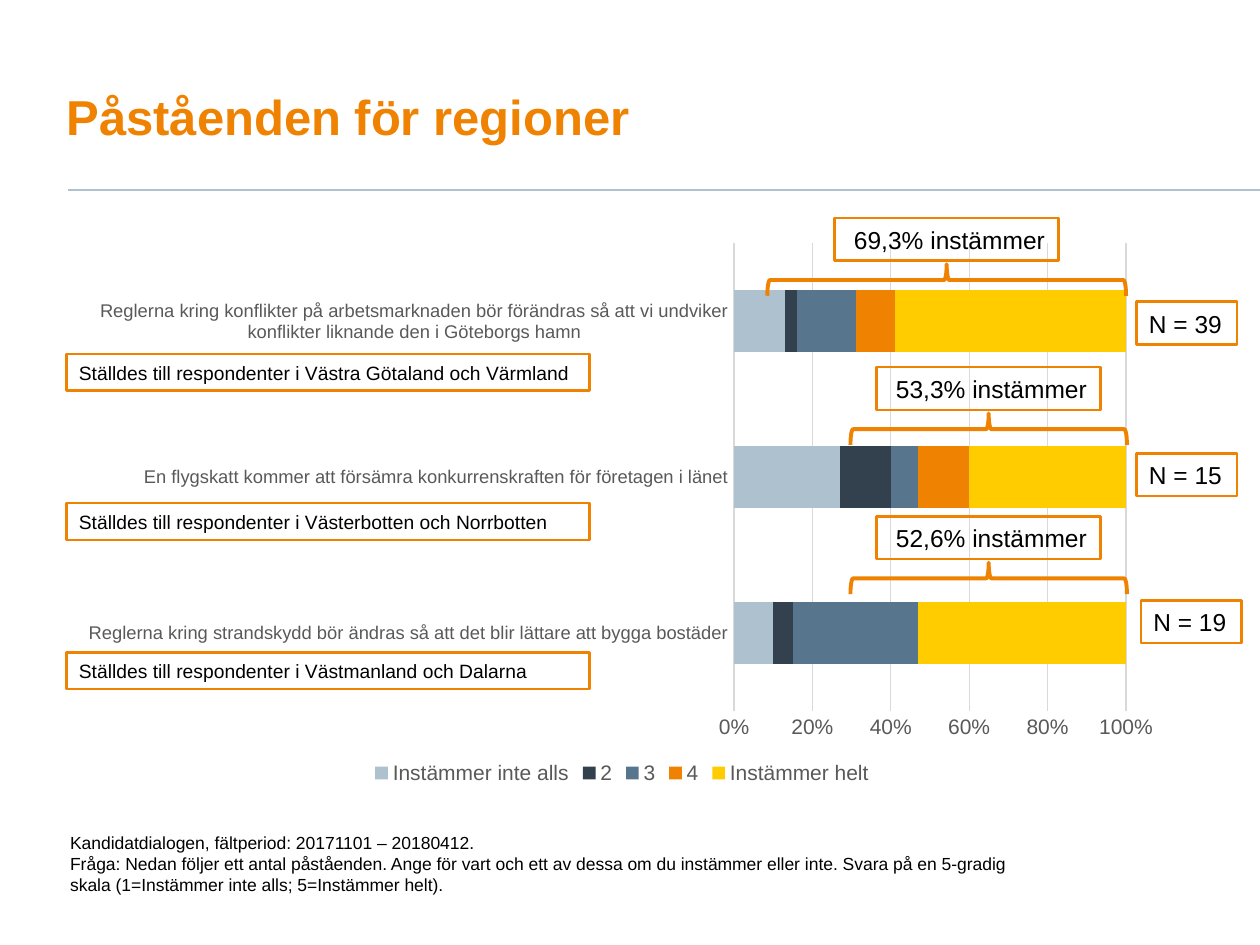
from dataclasses import dataclass
from lxml.etree import SubElement
from pptx import Presentation
from pptx.chart.data import CategoryChartData as Data
from pptx.dml.color import RGBColor
from pptx.enum.chart import XL_CHART_TYPE as Kind, XL_LEGEND_POSITION as Spot, XL_TICK_MARK as Tick
from pptx.enum.shapes import MSO_CONNECTOR as Link, MSO_SHAPE as Form
from pptx.enum.text import MSO_ANCHOR as Anchor, MSO_AUTO_SIZE as Auto, PP_ALIGN as Align
from pptx.oxml.ns import qn
from pptx.util import Pt


@dataclass(frozen=True)
class Theme:
    face: str = "Arial"
    ink: str = "000000"
    gray: str = "595959"
    grid: str = "D9D9D9"
    pale: str = "AEC1CF"
    dark: str = "33414E"
    blue: str = "57758D"
    main: str = "EF8200"
    gold: str = "FFCC00"
    head: float = 28
    tag: float = 14
    axis: float = 12
    note: float = 11
    label: float = 10.5
    foot: float = 10


def tint(hue):
    return RGBColor.from_string(hue)


def style(font, face, size, hue, bold=False):
    font.name, font.size, font.bold = face, Pt(size), bold
    font.color.rgb = tint(hue)


def write(frame, text, face, size, hue, bold=False, space=1.0,
          anchor=Anchor.TOP, inset=(7.2, 3.6, 7.2, 3.6), fit=Auto.SHAPE_TO_FIT_TEXT):
    frame.text = text
    frame.word_wrap, frame.auto_size = True, fit
    frame.vertical_anchor = anchor
    (frame.margin_left, frame.margin_top,
     frame.margin_right, frame.margin_bottom) = map(Pt, inset)
    for para in frame.paragraphs:
        para.alignment, para.line_spacing = Align.LEFT, space
        for run in para.runs:
            style(run.font, face, size, hue, bold)


class Page:
    def __init__(self, deck, theme):
        self.theme = theme
        self.slide = deck.slides.add_slide(deck.slide_layouts[5])
        self.shapes = self.slide.shapes

    def title(self, text, x, y, w, h):
        box = self.shapes.title
        box.left, box.top, box.width, box.height = map(Pt, (x, y, w, h))
        write(box.text_frame, text, self.theme.face, self.theme.head, self.theme.main,
              bold=True, space=0.9, anchor=Anchor.BOTTOM, inset=(0, 0, 7.2, 3.6),
              fit=Auto.NONE)

    def rule(self, x, y, end):
        line = self.shapes.add_connector(Link.STRAIGHT, Pt(x), Pt(y), Pt(end), Pt(y))
        line.line.color.rgb, line.line.width = tint(self.theme.pale), Pt(1)
        SubElement(line.element.spPr, qn("a:effectLst"))

    def text(self, text, x, y, w, h):
        box = self.shapes.add_textbox(*map(Pt, (x, y, w, h)))
        write(box.text_frame, text, self.theme.face, self.theme.foot, self.theme.ink)

    def form(self, kind, x, y, w, h, width, host=None):
        shape = (host or self).shapes.add_shape(kind, *map(Pt, (x, y, w, h)))
        shape.shadow.inherit = False
        shape.fill.background()
        shape.line.color.rgb, shape.line.width = tint(self.theme.main), Pt(width)
        return shape

    def box(self, text, x, y, w, h, size, host=None, **style):
        shape = self.form(Form.RECTANGLE, x, y, w, h, 1.5, host)
        write(shape.text_frame, text, self.theme.face, size, self.theme.ink,
              anchor=Anchor.MIDDLE, **style)

    def brace(self, text, mid, top, span):
        group = self.shapes.add_group_shape()
        deep, wide, high = 18, 128, 24.5
        y = top + high + 2 + (deep - span) / 2
        brace = self.form(Form.RIGHT_BRACE, mid - deep / 2, y, deep, span, 2.25, group)
        brace.rotation = 270
        self.box(text, mid - wide / 2, top, wide, high, self.theme.tag, group,
                 inset=(11, 3.6, 4, 3.6))

    def chart(self, cats, rows, x, y, w, h, plot):
        theme = self.theme
        data = Data()
        data.categories = cats
        for name, vals, _ in rows:
            data.add_series(name, vals)
        chart = self.shapes.add_chart(Kind.BAR_STACKED_100, *map(Pt, (x, y, w, h)), data).chart
        chart.has_title = False
        style(chart.font, theme.face, theme.foot, theme.ink)
        bars = chart.plots[0]
        bars.gap_width, bars.overlap, bars.vary_by_categories = 150, 100, False
        for series, (_, _, hue) in zip(bars.series, rows):
            series.format.fill.solid()
            series.format.fill.fore_color.rgb = tint(hue)
        chart.has_legend = True
        chart.legend.position, chart.legend.include_in_layout = Spot.BOTTOM, False
        style(chart.legend.font, theme.face, theme.axis, theme.gray)
        cat, val = chart.category_axis, chart.value_axis
        for axis, size in ((cat, theme.label), (val, theme.axis)):
            axis.major_tick_mark = axis.minor_tick_mark = Tick.NONE
            style(axis.tick_labels.font, theme.face, size, theme.gray)
        cat.has_major_gridlines, val.has_major_gridlines = False, True
        for line in (cat.format.line, val.major_gridlines.format.line):
            line.color.rgb, line.width = tint(theme.grid), Pt(0.75)
        val.format.line.fill.background()
        val.minimum_scale, val.maximum_scale, val.major_unit = 0, 1, 0.2
        val.tick_labels.number_format = "0%"
        val.tick_labels.number_format_is_linked = False
        area = chart.element.find(".//" + qn("c:plotArea"))
        layout = area.find(qn("c:layout"))
        if layout is None:
            layout = SubElement(area, qn("c:layout"))
            area.insert(0, layout)
        manual = SubElement(layout, qn("c:manualLayout"))
        parts = [("layoutTarget", "inner"), ("xMode", "edge"), ("yMode", "edge")]
        for name, value in parts + list(zip("xywh", plot)):
            SubElement(manual, qn("c:" + name), val=str(value))


def main():
    theme = Theme()
    deck = Presentation()
    deck.slide_width, deck.slide_height = Pt(720), Pt(540)
    page = Page(deck, theme)
    page.rule(39, 108.5, 720)
    page.title("Påståenden för regioner", 38, 22, 516, 65)
    cats = [
        "Reglerna kring strandskydd bör ändras så att det blir lättare att bygga bostäder",
        "En flygskatt kommer att försämra konkurrenskraften för företagen i länet",
        "Reglerna kring konflikter på arbetsmarknaden bör förändras så att vi undviker "
        "konflikter liknande den i Göteborgs hamn",
    ]
    rows = [
        ("Instämmer inte alls", (10, 27, 13), theme.pale),
        ("2", (5, 13, 3), theme.dark),
        ("3", (32, 7, 15), theme.blue),
        ("4", (0, 13, 10), theme.main),
        ("Instämmer helt", (53, 40, 59), theme.gold),
    ]
    page.chart(cats, rows, 35.5, 132.5, 640, 318.5, (0.6, 0.02, 0.35, 0.84))
    for text, x, y in (("N = 39", 649.5, 172.5), ("N = 15", 649.5, 259), ("N = 19", 652, 343)):
        page.box(text, x, y, 57.5, 24.5, theme.tag)
    places = ("Västra Götaland och Värmland", "Västerbotten och Norrbotten",
              "Västmanland och Dalarna")
    for i, place in enumerate(places):
        page.box(f"Ställdes till respondenter i {place}", 38, 202.25 + 85.25 * i, 299, 21,
                 theme.note)
    page.text("Kandidatdialogen, fältperiod: 20171101 – 20180412.\n"
              "Fråga: Nedan följer ett antal påståenden. Ange för vart och ett av dessa om du "
              "instämmer eller inte. Svara på en 5-gradig skala "
              "(1=Instämmer inte alls; 5=Instämmer helt).", 33, 472, 573, 44)
    shares = (("69,3%", 541, 205), ("53,3%", 565, 158), ("52,6%", 565, 158))
    for i, (share, mid, span) in enumerate(shares):
        page.brace(f"{share} instämmer", mid, 124.5 + 85.25 * i, span)
    deck.save("out.pptx")


if __name__ == "__main__":
    main()
